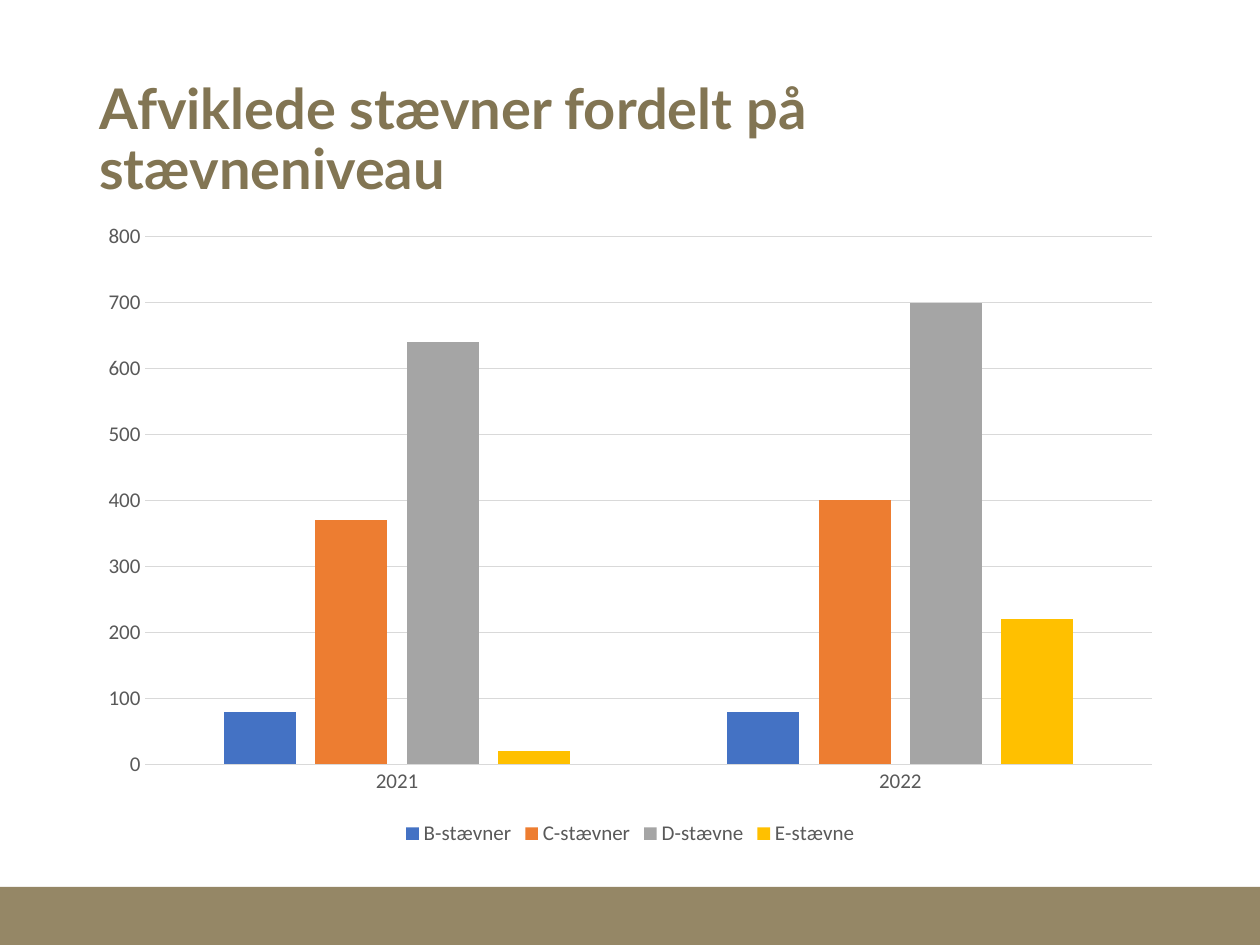
from dataclasses import dataclass

from pptx import Presentation
from pptx.chart.data import CategoryChartData as Data
from pptx.dml.color import RGBColor as Rgb
from pptx.enum.chart import XL_CHART_TYPE as Kind, XL_LEGEND_POSITION as Spot, XL_TICK_MARK as Tick
from pptx.enum.shapes import MSO_SHAPE as Form
from pptx.enum.text import MSO_ANCHOR as Anchor, MSO_AUTO_SIZE as Fit, PP_ALIGN as Align
from pptx.util import Cm, Pt


@dataclass(frozen=True)
class Theme:
    head: str = "827553"
    band: str = "958766"
    text: str = "595959"
    grid: str = "D9D9D9"
    head_font: str = "Lato"
    font: str = "Calibri"
    head_size: int = 32
    size: int = 12


@dataclass(frozen=True)
class Level:
    name: str
    vals: tuple[int, ...]
    color: str


THEME = Theme()
YEARS = ("2021", "2022")
LEVELS = (
    Level("B-stævner", (80, 80), "4472C4"),
    Level("C-stævner", (370, 400), "ED7D31"),
    Level("D-stævne", (640, 700), "A5A5A5"),
    Level("E-stævne", (20, 220), "FFC000"),
)
WIDE, HIGH = Cm(25.4), Cm(19.05)
LEFT, SPAN = Cm(1.75), Cm(21.91)


def paint(fill, color: str) -> None:
    fill.solid()
    fill.fore_color.rgb = Rgb.from_string(color)


def style(font, size: int, color: str, face: str, bold: bool = False) -> None:
    font.size = Pt(size)
    font.name = face
    font.bold = bold
    font.color.rgb = Rgb.from_string(color)


def label(font) -> None:
    style(font, THEME.size, THEME.text, THEME.font)


def rule(line) -> None:
    line.width = Pt(0.75)
    line.color.rgb = Rgb.from_string(THEME.grid)


def add_band(slide) -> None:
    top = Cm(17.88)
    band = slide.shapes.add_shape(Form.RECTANGLE, 0, top, WIDE, HIGH - top)
    band.shadow.inherit = False
    paint(band.fill, THEME.band)
    band.line.fill.background()


def set_title(slide, text: str) -> None:
    title = slide.shapes.title
    title.left, title.top, title.width, title.height = LEFT, Cm(1.01), SPAN, Cm(3.68)
    frame = title.text_frame
    frame.text = text
    frame.word_wrap = True
    frame.auto_size = Fit.NONE
    frame.vertical_anchor = Anchor.MIDDLE
    para = frame.paragraphs[0]
    para.alignment = Align.LEFT
    para.line_spacing = 0.9
    style(para.font, THEME.head_size, THEME.head, THEME.head_font, True)


def add_bars(slide, years: tuple[str, ...], levels: tuple[Level, ...]) -> None:
    data = Data()
    data.categories = years
    for level in levels:
        data.add_series(level.name, level.vals)
    chart = slide.shapes.add_chart(
        Kind.COLUMN_CLUSTERED, LEFT, Cm(4.26), SPAN, Cm(12.9), data
    ).chart
    label(chart.font)
    chart.has_title = False
    chart.has_legend = True
    chart.legend.position = Spot.BOTTOM
    chart.legend.include_in_layout = False
    label(chart.legend.font)

    plot = chart.plots[0]
    plot.gap_width, plot.overlap = 219, -27
    plot.vary_by_categories = False
    for series, level in zip(plot.series, levels):
        paint(series.format.fill, level.color)

    for axis in (chart.category_axis, chart.value_axis):
        axis.major_tick_mark = axis.minor_tick_mark = Tick.NONE
        label(axis.tick_labels.font)
    rule(chart.category_axis.format.line)
    value = chart.value_axis
    value.minimum_scale, value.maximum_scale, value.major_unit = 0, 800, 100
    value.format.line.fill.background()
    rule(value.major_gridlines.format.line)


def main() -> None:
    deck = Presentation()
    deck.slide_width, deck.slide_height = WIDE, HIGH
    slide = deck.slides.add_slide(deck.slide_layouts[5])
    add_band(slide)
    set_title(slide, "Afviklede stævner fordelt på stævneniveau")
    add_bars(slide, YEARS, LEVELS)
    deck.save("out.pptx")


if __name__ == "__main__":
    main()
